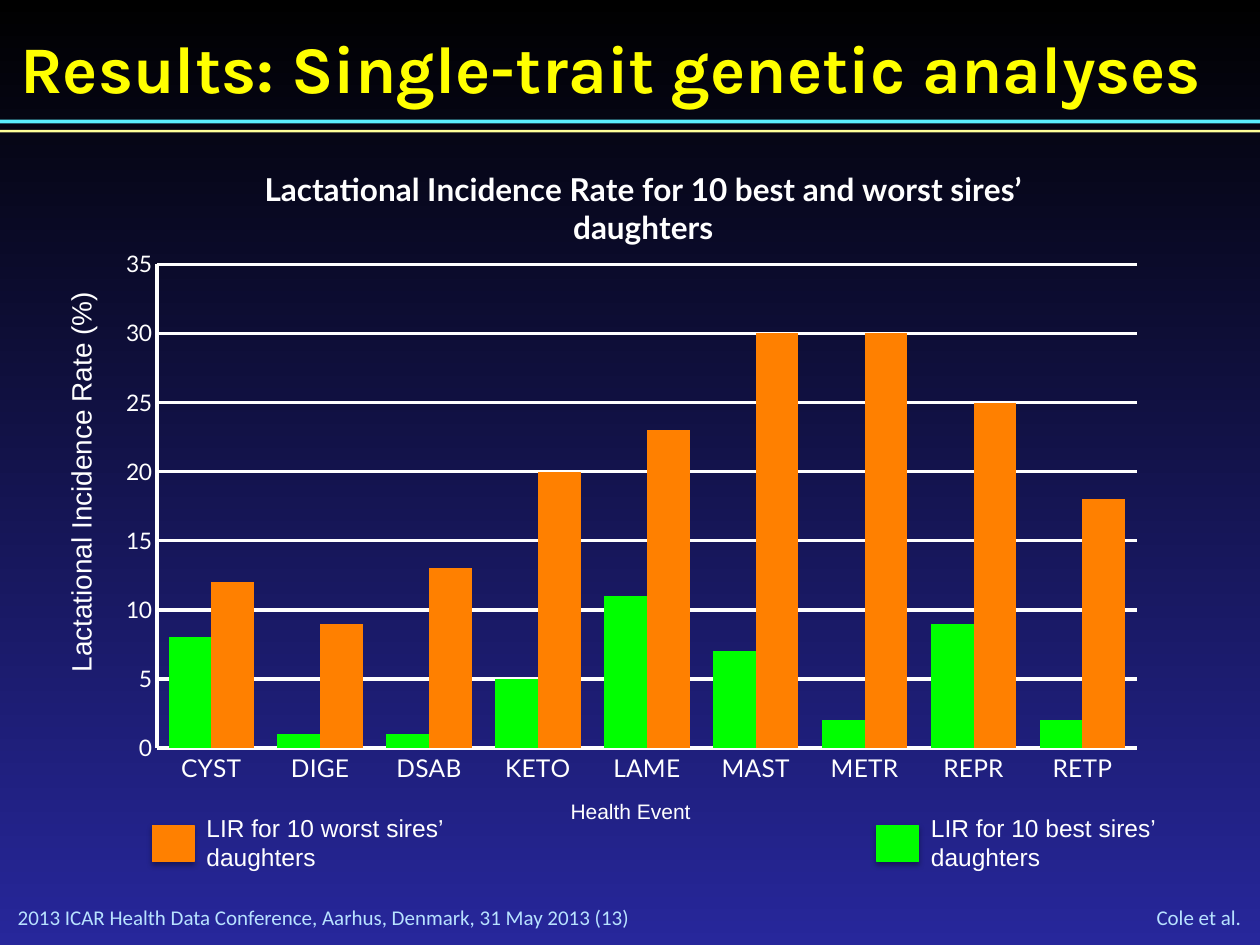
import pptx
import pptx.chart.data
import pptx.dml.color
import pptx.enum.chart
import pptx.enum.shapes
import pptx.enum.text
import pptx.oxml
import pptx.util

WIDTH, HEIGHT = 10, 7.5
WHITE, GREEN, ORANGE, PALE_BLUE = "FFFFFF", "00FF00", "FF8000", "B8E2FF"
LEFT = pptx.enum.text.PP_ALIGN.LEFT
RIGHT = pptx.enum.text.PP_ALIGN.RIGHT
EVENTS = ["CYST", "DIGE", "DSAB", "KETO", "LAME", "MAST", "METR", "REPR", "RETP"]
RATES = {
    "Series 1": (GREEN, [8, 1, 1, 5, 11, 7, 2, 9, 2]),
    "Series 2": (ORANGE, [12, 9, 13, 20, 23, 30, 30, 25, 18]),
}
DRAWING = 'xmlns:a="http://schemas.openxmlformats.org/drawingml/2006/main"'
CHART = 'xmlns:c="http://schemas.openxmlformats.org/drawingml/2006/chart"'


def color(code):
    """Turn a hex string into a colour."""
    return pptx.dml.color.RGBColor.from_string(code)


def frame(left, top, width, height):
    """Turn shares of the slide's size into lengths."""
    return [pptx.util.Inches(round(share * size, 2)) for share, size in
            zip((left, top, width, height), (WIDTH, HEIGHT, WIDTH, HEIGHT))]


def style_font(font, size, name, code=WHITE, bold=False):
    """Set the look of a font."""
    font.size = pptx.util.Pt(size)
    font.name = name
    font.bold = bold
    font.color.rgb = color(code)


def write(box, text, size, name, code=WHITE, align=LEFT, bold=False, flush=False):
    """Put one styled paragraph into a box."""
    text_frame = box.text_frame
    text_frame.text = text
    text_frame.word_wrap = True
    if flush:
        text_frame.margin_left = text_frame.margin_right = 0
        text_frame.margin_top = text_frame.margin_bottom = 0
        text_frame.vertical_anchor = pptx.enum.text.MSO_ANCHOR.MIDDLE
    para = text_frame.paragraphs[0]
    para.alignment = align
    style_font(para.runs[0].font, size, name, code, bold)


def add_label(slide, place, text, size, name="Arial", **look):
    """Add a text box with one paragraph."""
    box = slide.shapes.add_textbox(*frame(*place))
    write(box, text, size, name, **look)
    return box


def add_bar(slide, place, code):
    """Add a plain filled rectangle."""
    bar = slide.shapes.add_shape(pptx.enum.shapes.MSO_SHAPE.RECTANGLE, *frame(*place))
    bar.fill.solid()
    bar.fill.fore_color.rgb = color(code)
    bar.line.fill.background()
    bar.shadow.inherit = False
    return bar


def add_key(slide, left, text, code):
    """Add a shadowed legend swatch with its label."""
    swatch = add_bar(slide, (left, 0.873, 0.033, 0.039), code)
    swatch.line.color.rgb = color(code)
    swatch.line.width = pptx.util.Pt(0.75)
    shadow = pptx.oxml.parse_xml(
        f'<a:outerShdw {DRAWING} blurRad="39370" dist="22860" dir="5400000" rotWithShape="0">'
        '<a:srgbClr val="000000"><a:alpha val="35000"/></a:srgbClr></a:outerShdw>')
    swatch.element.spPr.find(pptx.oxml.ns.qn("a:effectLst")).append(shadow)
    add_label(slide, (left + 0.033, 0.853, 0.224, 0.08), text, 14)


def style_axis(axis, size):
    """Give an axis white labels and a white line without ticks."""
    style_font(axis.tick_labels.font, size, "Lato")
    axis.major_tick_mark = axis.minor_tick_mark = pptx.enum.chart.XL_TICK_MARK.NONE
    axis.format.line.color.rgb = color(WHITE)
    axis.format.line.width = pptx.util.Pt(2)


def place_plot(chart, left, top, width, height):
    """Fix the inner plot area as shares of the chart."""
    area = chart.element.chart.plotArea
    for old in area.findall(pptx.oxml.ns.qn("c:layout")):
        area.remove(old)
    lengths = "".join(f'<c:{tag} val="{value}"/>' for tag, value in
                      zip("xywh", (left, top, width, height)))
    area.insert(0, pptx.oxml.parse_xml(
        f'<c:layout {CHART}><c:manualLayout><c:layoutTarget val="inner"/>'
        f'<c:xMode val="edge"/><c:yMode val="edge"/>{lengths}</c:manualLayout></c:layout>'))


def add_rate_chart(slide, place):
    """Add the clustered columns of incidence rates."""
    data = pptx.chart.data.CategoryChartData()
    data.categories = EVENTS
    for name, (_, values) in RATES.items():
        data.add_series(name, values)
    chart = slide.shapes.add_chart(
        pptx.enum.chart.XL_CHART_TYPE.COLUMN_CLUSTERED, *frame(*place), data).chart
    style_font(chart.font, 10, "Lato")
    chart.has_legend = False
    chart.has_title = True
    title = chart.chart_title
    title.include_in_layout = False
    title.text_frame.text = "Lactational Incidence Rate for 10 best and worst sires’ daughters"
    style_font(title.text_frame.paragraphs[0].runs[0].font, 18, "Lato", bold=True)
    plot = chart.plots[0]
    plot.gap_width, plot.overlap, plot.vary_by_categories = 55, 0, False
    for series in plot.series:
        series.format.fill.solid()
        series.format.fill.fore_color.rgb = color(RATES[series.name][0])
        series.invert_if_negative = False
    style_axis(chart.category_axis, 14)
    scale = chart.value_axis
    style_axis(scale, 13)
    scale.minimum_scale, scale.maximum_scale, scale.major_unit = 0, 35, 5
    scale.major_gridlines.format.line.color.rgb = color(WHITE)
    scale.major_gridlines.format.line.width = pptx.util.Pt(2)
    place_plot(chart, 0.041, 0.189, 0.925, 0.741)


def paint_background(slide):
    """Fade the slide from black down to blue."""
    fill = slide.background.fill
    fill.gradient()
    fill.gradient_angle = 270
    for stop, position, code in zip(fill.gradient_stops, (0, 1), ("000000", "27279B")):
        stop.position = position
        stop.color.rgb = color(code)


def place_title(slide, place, text):
    """Move and format the title placeholder."""
    title = slide.shapes.title
    title.left, title.top, title.width, title.height = frame(*place)
    write(title, text, 38, "Karla", code="FFFF00", bold=True, flush=True)
    title.text_frame.auto_size = pptx.enum.text.MSO_AUTO_SIZE.NONE


def main():
    """Build the slide and save it."""
    deck = pptx.Presentation()
    deck.slide_width = pptx.util.Inches(WIDTH)
    deck.slide_height = pptx.util.Inches(HEIGHT)
    slide = deck.slides.add_slide(deck.slide_layouts.get_by_name("Title Only"))
    paint_background(slide)
    add_label(slide, (0.014, 0.957, 0.578, 0.027),
              "2013 ICAR Health Data Conference, Aarhus, Denmark, 31 May 2013 (13)",
              12, "Calibri", code=PALE_BLUE, flush=True)
    add_bar(slide, (0, 0.127, 1, 0.004), "5BEFFF")
    add_bar(slide, (0, 0.137, 1, 0.003), "FFFF99")
    add_label(slide, (0.872, 0.956, 0.113, 0.028), "Cole et al.",
              12, "Calibri", code=PALE_BLUE, align=RIGHT, flush=True)
    place_title(slide, (0.016, 0.021, 0.97, 0.099), "Results: Single-trait genetic analyses")
    add_rate_chart(slide, (0.09, 0.149, 0.841, 0.691))
    scale_label = add_label(slide, (-0.107, 0.465, 0.347, 0.056),
                            "Lactational Incidence Rate (%)", 16)
    scale_label.rotation = 270
    add_label(slide, (0.443, 0.839, 0.176, 0.056), "Health Event", 12)
    add_key(slide, 0.121, "LIR for 10 worst sires’ daughters", ORANGE)
    add_key(slide, 0.696, "LIR for 10 best sires’ daughters", GREEN)
    deck.save("out.pptx")


if __name__ == "__main__":
    main()
